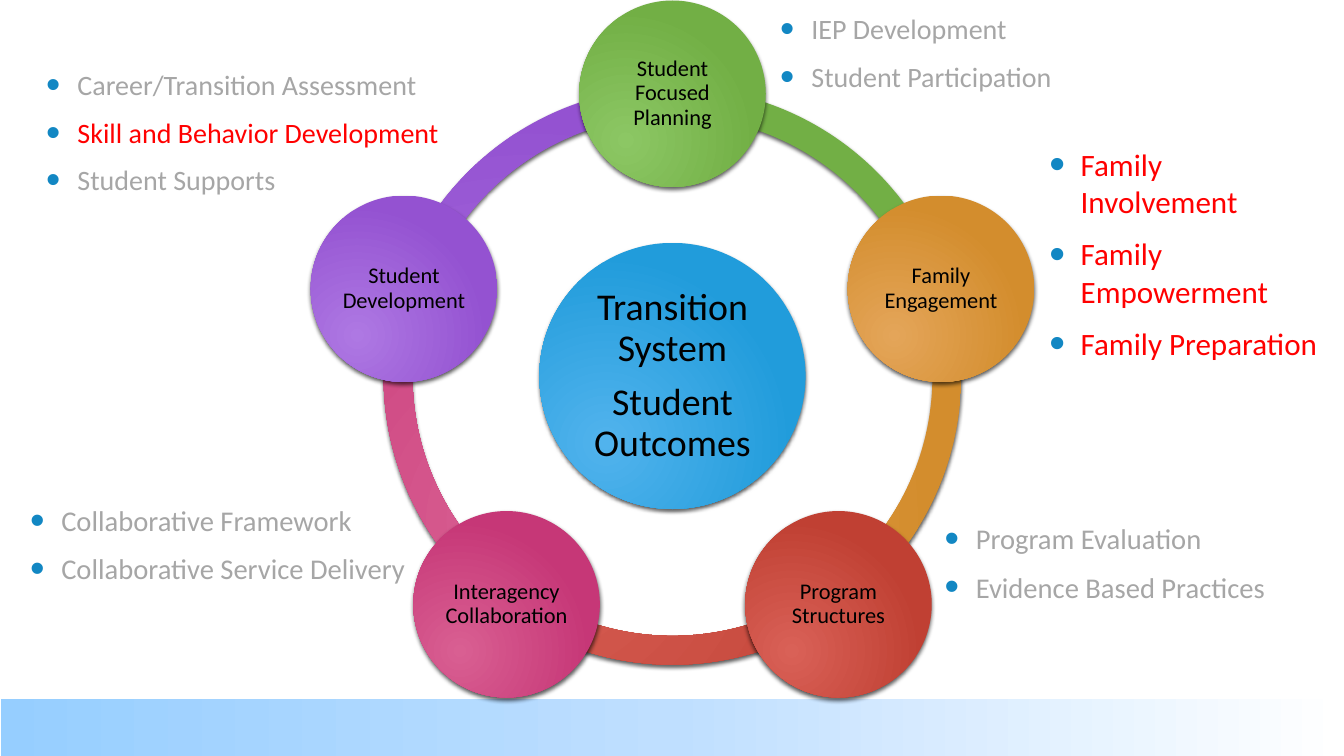
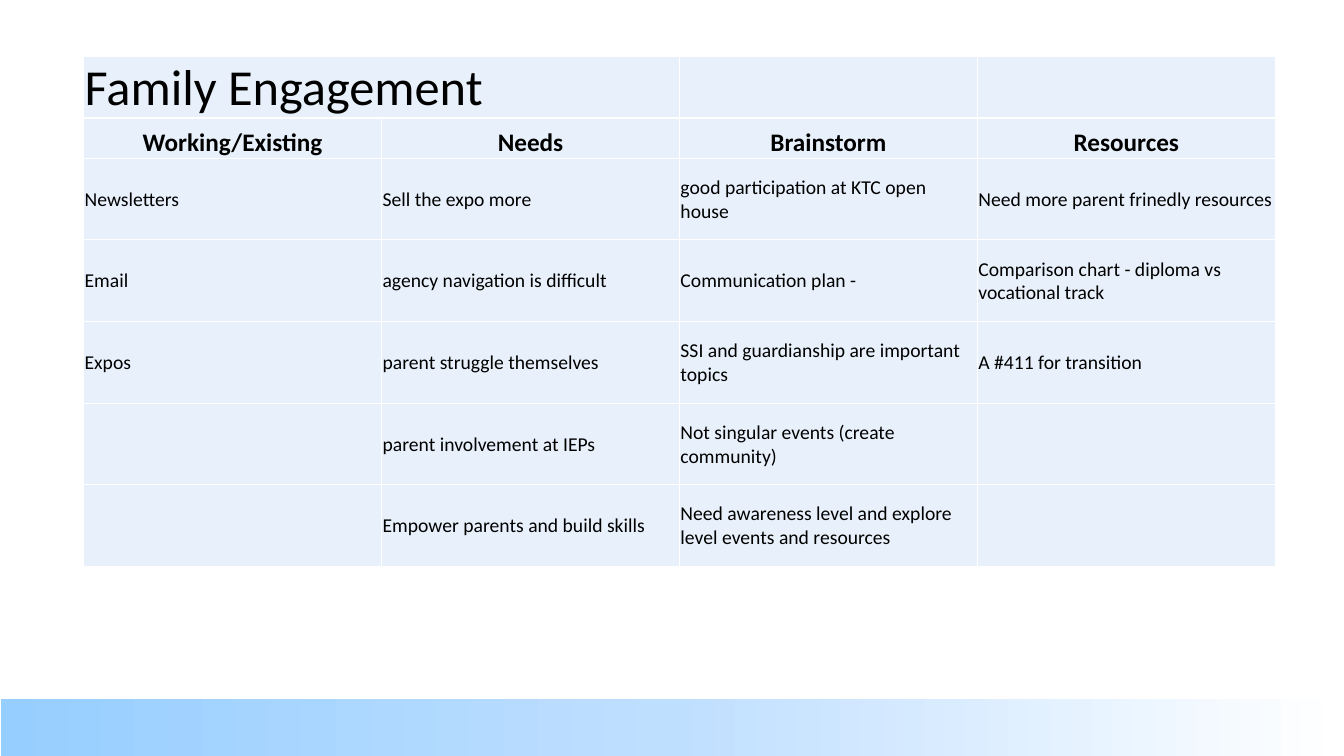
import math
from dataclasses import dataclass

from lxml import etree
from pptx import Presentation
from pptx import util as u
from pptx.dml.color import RGBColor
from pptx.enum import shapes, text
from pptx.oxml import ns


@dataclass(frozen=True)
class Theme:
    font: str = "Calibri"
    black: str = "000000"
    gray: str = "A6A6A6"
    red: str = "FF0000"
    bullet: str = "1287C3"
    cell: str = "E8F1FB"
    blue: tuple = ("51B3ED", "219CDB")
    green: tuple = ("8CC764", "72AF45")
    orange: tuple = ("E4A559", "D38D2D")
    brick: tuple = ("D96157", "C04033")
    pink: tuple = ("D95F92", "C63777")
    purple: tuple = ("AE78E3", "9452D1")
    band: tuple = ("96CEFF", "BFDFFF", "FFFFFF")
    title_size: float = 36
    hub_size: float = 27
    heading_size: float = 18
    node_size: float = 16
    body_size: float = 14


theme = Theme()


def add_run(paragraph, wording, size, color=theme.black, bold=False):
    run = paragraph.add_run()
    run.text = wording
    run.font.name = theme.font
    run.font.size = u.Pt(size)
    run.font.bold = bold
    run.font.color.rgb = RGBColor.from_string(color)


def set_gradient(fill, properties, colors, radial):
    fill.gradient()
    gradient = properties.find(ns.qn("a:gradFill"))
    for child in list(gradient):
        gradient.remove(child)
    stops = etree.SubElement(gradient, ns.qn("a:gsLst"))
    for index, color in enumerate(colors):
        position = 100000 * index // (len(colors) - 1)
        stop = etree.SubElement(stops, ns.qn("a:gs"), pos=str(position))
        etree.SubElement(stop, ns.qn("a:srgbClr"), val=color)
    if radial:
        shade = etree.SubElement(gradient, ns.qn("a:path"), path="circle")
        etree.SubElement(shade, ns.qn("a:fillToRect"), l="50000", t="100000", r="100000", b="50000")
    else:
        etree.SubElement(gradient, ns.qn("a:lin"), ang="0", scaled="0")


presentation = Presentation()
presentation.slide_width = u.Inches(13.33)
presentation.slide_height = u.Inches(7.5)
layout = presentation.slide_layouts[6]
for placeholder in list(layout.placeholders):
    placeholder.element.getparent().remove(placeholder.element)

slide = presentation.slides.add_slide(layout)
band = slide.shapes.add_table(1, 1, 0, u.Inches(6.93), presentation.slide_width, u.Inches(0.7))
band_cell = band.table.cell(0, 0)
set_gradient(band_cell.fill, band_cell._tc.get_or_add_tcPr(), theme.band, False)
layout.shapes.element.append(band.element)

center_x, center_y = 6.67, 3.73
orbit, ring_size, node_diameter, hub_diameter = 2.8, 5.73, 1.85, 2.64
nodes = [
    ("Student Focused Planning", theme.green),
    ("Family Engagement", theme.orange),
    ("Program Structures", theme.brick),
    ("Interagency Collaboration", theme.pink),
    ("Student Development", theme.purple),
]
step = 360 / len(nodes)

pieces = []
for index, (label, colors) in reversed(list(enumerate(nodes))):
    start = (270 + step * index) % 360
    adjustments = (start * 0.6, (start + step) % 360 * 0.6, 0.05)
    pieces.append((shapes.MSO_SHAPE.BLOCK_ARC, center_x, center_y, ring_size, colors, adjustments, [], 0))
pieces.append((shapes.MSO_SHAPE.OVAL, center_x, center_y, hub_diameter, theme.blue, (),
               ["Transition System", "Student Outcomes"], theme.hub_size))
for index, (label, colors) in enumerate(nodes):
    angle = math.radians(270 + step * index)
    pieces.append((shapes.MSO_SHAPE.OVAL, center_x + orbit * math.cos(angle),
                   center_y + orbit * math.sin(angle), node_diameter, colors, (),
                   [label], theme.node_size))

for kind, middle_x, middle_y, diameter, colors, adjustments, lines, size in pieces:
    shape = slide.shapes.add_shape(
        kind, u.Inches(middle_x - diameter / 2), u.Inches(middle_y - diameter / 2),
        u.Inches(diameter), u.Inches(diameter))
    for index, value in enumerate(adjustments):
        shape.adjustments[index] = value
    properties = shape.element.spPr
    set_gradient(shape.fill, properties, colors, True)
    shape.line.fill.background()
    shape.shadow.inherit = False
    shadow = etree.SubElement(properties.find(ns.qn("a:effectLst")), ns.qn("a:outerShdw"),
                              blurRad="38100", dist="25400", dir="5400000", rotWithShape="0")
    shadow_color = etree.SubElement(shadow, ns.qn("a:srgbClr"), val=theme.black)
    etree.SubElement(shadow_color, ns.qn("a:alpha"), val="64000")
    frame = shape.text_frame
    frame.word_wrap = True
    frame.vertical_anchor = text.MSO_ANCHOR.MIDDLE
    frame.margin_left = frame.margin_right = u.Inches(0.02)
    frame.margin_top = frame.margin_bottom = u.Inches(0.02)
    for index, wording in enumerate(lines):
        paragraph = frame.add_paragraph() if index else frame.paragraphs[0]
        paragraph.alignment = text.PP_ALIGN.CENTER
        paragraph.line_spacing = 0.9
        paragraph.space_after = u.Pt(size * 0.35)
        add_run(paragraph, wording, size)

bullet_lists = [
    (0.36, 0.29, 4.58, 2.04, 20, [("Career/Transition Assessment", theme.gray),
                                  ("Skill and Behavior Development", theme.red),
                                  ("Student Supports", theme.gray)]),
    (7.64, 0, 3.4, 1.04, 20, [("IEP Development", theme.gray),
                              ("Student Participation", theme.gray)]),
    (10.31, 1.31, 2.89, 2.41, 22.2, [("Family Involvement", theme.red),
                                     ("Family Empowerment", theme.red),
                                     ("Family Preparation", theme.red)]),
    (9.27, 5.18, 4, 0.8, 20.4, [("Program Evaluation", theme.gray),
                                ("Evidence Based Practices", theme.gray)]),
    (0.2, 4.95, 4.74, 0.89, 20.4, [("Collaborative Framework", theme.gray),
                                   ("Collaborative Service Delivery", theme.gray)]),
]
for left, top, width, height, size, items in bullet_lists:
    box = slide.shapes.add_textbox(u.Inches(left), u.Inches(top), u.Inches(width), u.Inches(height))
    frame = box.text_frame
    frame.word_wrap = True
    frame.vertical_anchor = text.MSO_ANCHOR.MIDDLE
    for index, (wording, color) in enumerate(items):
        paragraph = frame.add_paragraph() if index else frame.paragraphs[0]
        properties = paragraph._p.get_or_add_pPr()
        properties.set("marL", str(u.Inches(0.31)))
        properties.set("indent", str(-u.Inches(0.31)))
        bullet_color = etree.SubElement(properties, ns.qn("a:buClr"))
        etree.SubElement(bullet_color, ns.qn("a:srgbClr"), val=theme.bullet)
        etree.SubElement(properties, ns.qn("a:buSzPct"), val="145000")
        etree.SubElement(properties, ns.qn("a:buFont"), typeface="Arial")
        etree.SubElement(properties, ns.qn("a:buChar"), char="•")
        if index:
            paragraph.space_before = u.Pt(size * 0.2)
        paragraph.space_after = u.Pt(6)
        add_run(paragraph, wording, size, color)

slide = presentation.slides.add_slide(layout)
rows = [
    ["Family Engagement", "", "", ""],
    ["Working/Existing", "Needs", "Brainstorm", "Resources"],
    ["Newsletters", "Sell the expo more", "good participation at KTC open house",
     "Need more parent frinedly resources"],
    ["Email", "agency navigation is difficult", "Communication plan -",
     "Comparison chart - diploma vs vocational track"],
    ["Expos", "parent struggle themselves", "SSI and guardianship are important topics",
     "A #411 for transition"],
    ["", "parent involvement at IEPs", "Not singular events (create community)", ""],
    ["", "Empower parents and build skills",
     "Need awareness level and explore level events and resources", ""],
]
row_heights = [0.61, 0.4] + [0.81] * 5
row_sizes = [theme.title_size, theme.heading_size] + [theme.body_size] * 5
table = slide.shapes.add_table(len(rows), 4, u.Inches(0.83), u.Inches(0.56),
                               u.Inches(11.82), u.Inches(sum(row_heights))).table
table.first_row = False
table.horz_banding = False
for row_index, row in enumerate(rows):
    table.rows[row_index].height = u.Inches(row_heights[row_index])
    is_heading = row_index == 1
    for column_index, wording in enumerate(row):
        cell = table.cell(row_index, column_index)
        cell.fill.solid()
        cell.fill.fore_color.rgb = RGBColor.from_string(theme.cell)
        cell.margin_left = cell.margin_right = cell.margin_top = u.Inches(0.01)
        cell.margin_bottom = 0
        cell.vertical_anchor = text.MSO_ANCHOR.BOTTOM if row_index < 2 else text.MSO_ANCHOR.MIDDLE
        if wording:
            paragraph = cell.text_frame.paragraphs[0]
            paragraph.alignment = text.PP_ALIGN.CENTER if is_heading else text.PP_ALIGN.LEFT
            add_run(paragraph, wording, row_sizes[row_index], bold=is_heading)
table.cell(0, 0).merge(table.cell(0, 1))

presentation.save("out.pptx")
